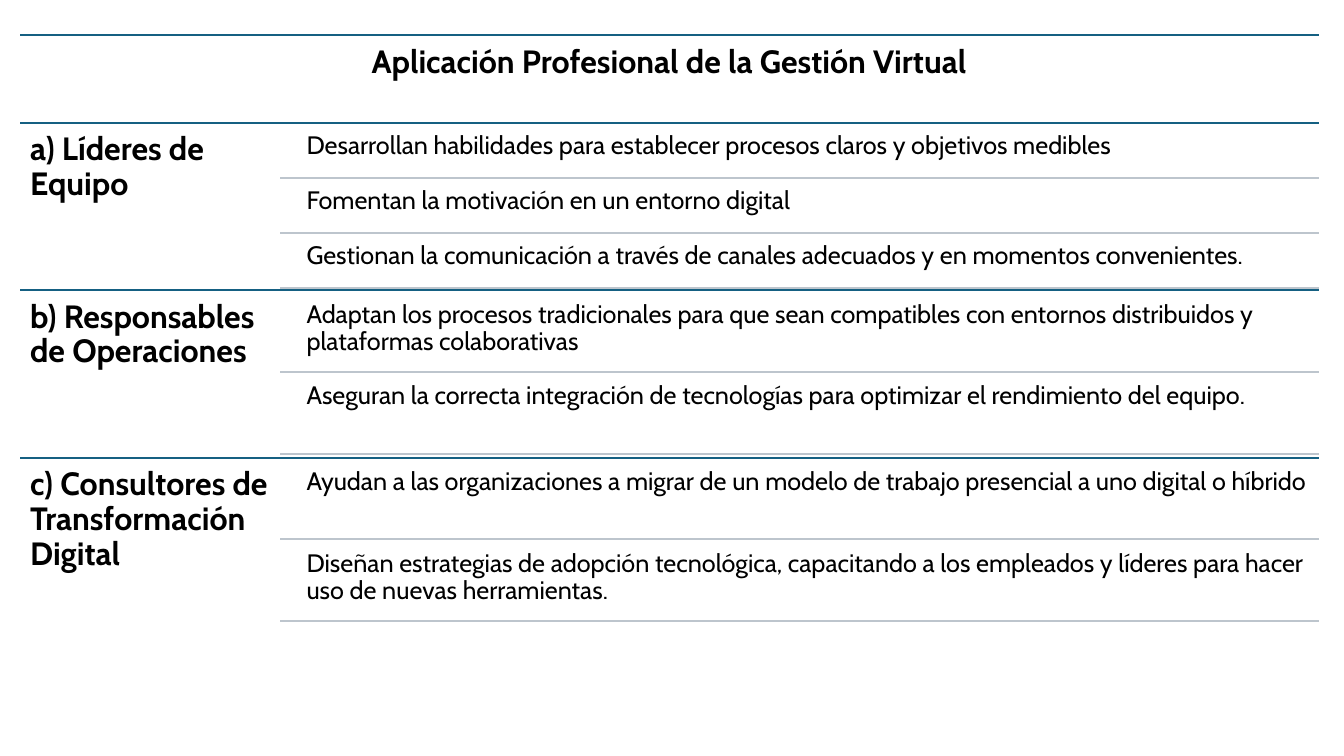
from dataclasses import dataclass

import pptx
import pptx.dml.color
import pptx.enum.shapes
import pptx.enum.text
import pptx.oxml
import pptx.oxml.ns
import pptx.util

Inches = pptx.util.Inches
Pt = pptx.util.Pt
ALIGN = pptx.enum.text.PP_ALIGN


@dataclass(frozen=True)
class Theme:
    font: str = "Cabin"
    ink: str = "000000"
    section_rule: str = "156082"
    item_rule: str = "BDC5CD"
    heading_size: float = 23
    item_size: float = 18
    rule_width: float = 1.5
    heading_inset: float = 0.1
    item_inset: float = 0.07


@dataclass(frozen=True)
class Box:
    left: float
    top: float
    width: float
    height: float


THEME = Theme()
TITLE = "Aplicación Profesional de la Gestión Virtual"
TITLE_BOX = Box(0.2, 0.35, 12.88, 0.87)
ROLE_HEIGHT = 1.66
ROLE_NAME_WIDTH = 2.58
ITEM_INDENT = 0.19
ITEM_GAP_RATIO = 0.05  # gap between items as a share of item height

ROLES = [
    ("a) Líderes de Equipo", [
        "Desarrollan habilidades para establecer procesos claros y objetivos medibles",
        "Fomentan la motivación en un entorno digital",
        "Gestionan la comunicación a través de canales adecuados y en momentos convenientes.",
    ]),
    ("b) Responsables de Operaciones", [
        "Adaptan los procesos tradicionales para que sean compatibles con entornos "
        "distribuidos y plataformas colaborativas",
        "Aseguran la correcta integración de tecnologías para optimizar el rendimiento del equipo.",
    ]),
    ("c) Consultores de Transformación Digital", [
        "Ayudan a las organizaciones a migrar de un modelo de trabajo presencial "
        "a uno digital o híbrido",
        "Diseñan estrategias de adopción tecnológica, capacitando a los empleados y líderes "
        "para hacer uso de nuevas herramientas.",
    ]),
]


def add_rule(page, left, right, top, color):
    rule = page.shapes.add_connector(
        pptx.enum.shapes.MSO_CONNECTOR.STRAIGHT,
        Inches(left), Inches(top), Inches(right), Inches(top))
    rule.line.color.rgb = pptx.dml.color.RGBColor.from_string(color)
    rule.line.width = Pt(THEME.rule_width)
    properties = rule._element.spPr
    properties.append(pptx.oxml.parse_xml(
        "<a:effectLst %s/>" % pptx.oxml.ns.nsdecls("a")))


def write_text(shape, text, size, inset, bold=False, align=ALIGN.LEFT):
    frame = shape.text_frame
    frame.word_wrap = True
    frame.auto_size = pptx.enum.text.MSO_AUTO_SIZE.NONE
    frame.vertical_anchor = pptx.enum.text.MSO_ANCHOR.TOP
    frame.margin_left = frame.margin_right = Inches(inset)
    frame.margin_top = frame.margin_bottom = Inches(inset)
    para = frame.paragraphs[0]
    para.alignment = align
    para.line_spacing = 0.9
    para.space_before = Pt(0)
    para.space_after = Pt(round(size * 0.35))
    span = para.add_run()
    span.text = text
    span.font.name = THEME.font
    span.font.size = Pt(size)
    span.font.bold = bold
    span.font.color.rgb = pptx.dml.color.RGBColor.from_string(THEME.ink)


def add_text(page, box, text, size, inset, bold=False):
    shape = page.shapes.add_textbox(
        Inches(box.left), Inches(box.top), Inches(box.width), Inches(box.height))
    write_text(shape, text, size, inset, bold)


def place_title(page, box):
    add_rule(page, box.left, box.left + box.width, box.top, THEME.section_rule)
    title = page.shapes.title
    title.left, title.top = Inches(box.left), Inches(box.top)
    title.width, title.height = Inches(box.width), Inches(box.height)
    write_text(title, TITLE, THEME.heading_size, THEME.heading_inset, True, ALIGN.CENTER)


def add_items(page, box, items):
    """Stack the items evenly in the box, each with a rule below it."""
    count = len(items)
    height = box.height / (count + ITEM_GAP_RATIO * (count + 1))
    gap = height * ITEM_GAP_RATIO
    right = box.left + box.width
    for index, item in enumerate(items):
        top = box.top + gap + index * (height + gap)
        left = box.left + ITEM_INDENT
        add_text(page, Box(left, top, right - left, height), item,
                 THEME.item_size, THEME.item_inset)
        add_rule(page, box.left, right, top + height, THEME.item_rule)


def add_role(page, box, name, items):
    add_rule(page, box.left, box.left + box.width, box.top, THEME.section_rule)
    add_text(page, Box(box.left, box.top, ROLE_NAME_WIDTH, box.height), name,
             THEME.heading_size, THEME.heading_inset, bold=True)
    add_items(page, Box(box.left + ROLE_NAME_WIDTH, box.top,
                        box.width - ROLE_NAME_WIDTH, box.height), items)


def main():
    deck = pptx.Presentation()
    deck.slide_width, deck.slide_height = Inches(13.33), Inches(7.5)
    page = deck.slides.add_slide(deck.slide_layouts.get_by_name("Title Only"))
    place_title(page, TITLE_BOX)
    first_top = TITLE_BOX.top + TITLE_BOX.height
    for index, (name, items) in enumerate(ROLES):
        box = Box(TITLE_BOX.left, first_top + index * ROLE_HEIGHT,
                  TITLE_BOX.width, ROLE_HEIGHT)
        add_role(page, box, name, items)
    deck.save("out.pptx")


if __name__ == "__main__":
    main()
